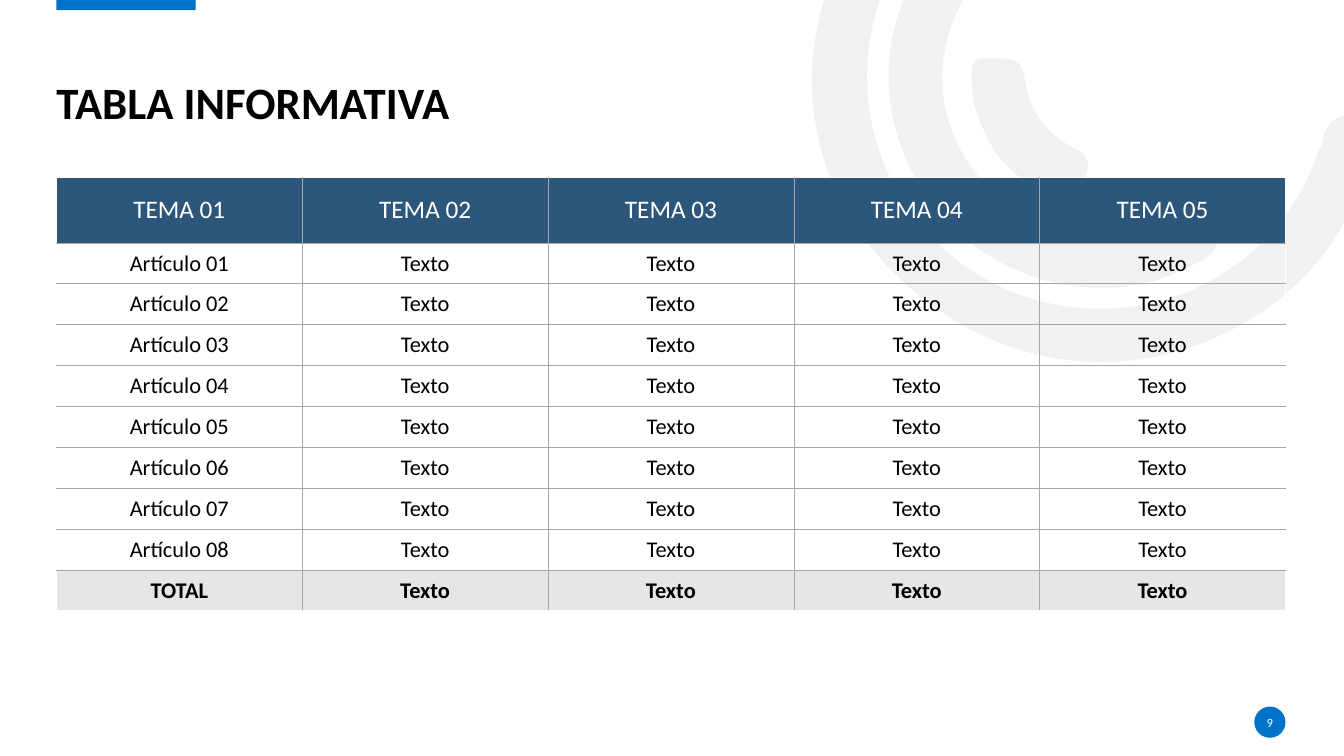
import pptx
import pptx.util
import pptx.dml.color
import pptx.enum.shapes
import pptx.enum.text
import pptx.oxml
import pptx.oxml.ns

W, H = 13.33, 7.5
MARGIN = 0.56
CONTENT_W = 12.19
FONT = "Calibri"
BLUE, NAVY, GREY, RULE = "0072C7", "2C567A", "E7E6E6", "A6A6A6"
WHITE, BLACK = "FFFFFF", "000000"

HEADERS = [f"TEMA {n:02d}" for n in range(1, 6)]
LABELS = [f"Artículo {n:02d}" for n in range(1, 9)] + ["TOTAL"]
ROWS = [HEADERS] + [[label] + ["Texto"] * 4 for label in LABELS]

# Background arcs: a start point, then cubic curves (two controls and an end)
ARCS = [
    ((8.51, 2.29), [
        (7.99, 1.49, 7.87, 0.5, 8.38, -0.5),
        (8.9, -1.52, 9.76, -2.03, 10.9, -2.07),
        (11.05, -2.07, 11.21, -2.1, 11.31, -1.95),
        (11.44, -1.75, 11.27, -1.54, 10.98, -1.54),
        (9.67, -1.54, 8.65, -0.59, 8.6, 0.68),
        (8.56, 1.81, 9.36, 2.81, 10.46, 3.02),
        (11.6, 3.24, 12.7, 2.61, 13.07, 1.52),
        (13.09, 1.48, 13.11, 1.44, 13.12, 1.4),
        (13.16, 1.19, 13.27, 1.11, 13.49, 1.17),
        (13.73, 1.24, 13.67, 1.41, 13.61, 1.56),
        (13.34, 2.45, 12.78, 3.07, 11.91, 3.41),
        (10.7, 3.87, 9.36, 3.45, 8.51, 2.29)]),
    ((9.22, 1.99), [
        (8.62, 1.15, 8.69, 0.07, 9.4, -0.68),
        (9.51, -0.79, 9.62, -0.95, 9.8, -0.78),
        (9.95, -0.64, 9.97, -0.5, 9.79, -0.32),
        (9.25, 0.26, 9.2, 1.08, 9.65, 1.68),
        (10.08, 2.29, 10.88, 2.49, 11.61, 2.15),
        (11.82, 2.05, 11.93, 2.12, 12.03, 2.29),
        (12.13, 2.5, 11.97, 2.56, 11.83, 2.63),
        (10.96, 3.1, 9.83, 2.82, 9.22, 1.99)]),
    ((9.87, 1.51), [
        (9.75, 1.3, 9.64, 1.07, 9.64, 0.82),
        (9.64, 0.73, 9.61, 0.57, 9.76, 0.58),
        (9.92, 0.59, 10.13, 0.53, 10.16, 0.76),
        (10.21, 1.1, 10.36, 1.32, 10.67, 1.48),
        (10.88, 1.57, 10.76, 1.76, 10.72, 1.89),
        (10.68, 2.06, 10.55, 1.98, 10.45, 1.94),
        (10.21, 1.87, 10.03, 1.7, 9.87, 1.51)]),
]


def rgb(value):
    return pptx.dml.color.RGBColor.from_string(value)


def inches(*lengths):
    return [pptx.util.Inches(v) for v in lengths]


def paint(sp, color):
    sp.shadow.inherit = False
    sp.fill.solid()
    sp.fill.fore_color.rgb = rgb(color)
    sp.line.fill.background()


def write(tf, text, size, color, bold=False, align=None):
    tf.text = text
    p = tf.paragraphs[0]
    p.alignment = align
    font = p.runs[0].font
    font.name, font.size, font.bold = FONT, pptx.util.Pt(size), bold
    font.color.rgb = rgb(color)
    return p


def clear_insets(tf):
    tf.margin_left = tf.margin_top = tf.margin_right = tf.margin_bottom = 0


def bend(sp):
    """Turn each three line segments of a freeform into one cubic curve."""
    qn = pptx.oxml.ns.qn
    lines = list(sp._element.iter(qn("a:lnTo")))
    for i in range(0, len(lines), 3):
        curve = pptx.oxml.parse_xml(f'<a:cubicBezTo {pptx.oxml.ns.nsdecls("a")}/>')
        lines[i].addprevious(curve)
        for line in lines[i:i + 3]:
            curve.append(line[0])
            line.getparent().remove(line)


def add_arcs(slide):
    units = 100  # path units per inch
    for start, curves in ARCS:
        points = [start] + [c[i:i + 2] for c in curves for i in (0, 2, 4)]
        points = [(round(x * units), round(y * units)) for x, y in points]
        builder = slide.shapes.build_freeform(*points[0], scale=pptx.util.Inches(1) / units)
        builder.add_line_segments(points[1:], close=True)
        sp = builder.convert_to_shape()
        bend(sp)
        paint(sp, GREY)
        clr = sp._element.spPr.find(".//" + pptx.oxml.ns.qn("a:srgbClr"))
        clr.append(pptx.oxml.parse_xml(
            f'<a:alpha {pptx.oxml.ns.nsdecls("a")} val="53000"/>'))


def add_top_bar(slide, x, y, w, h):
    sp = slide.shapes.add_shape(pptx.enum.shapes.MSO_SHAPE.RECTANGLE, *inches(x, y, w, h))
    paint(sp, BLUE)


def add_page_number(slide, x, y, size, number):
    sp = slide.shapes.add_shape(pptx.enum.shapes.MSO_SHAPE.OVAL, *inches(x, y, size, size))
    paint(sp, BLUE)
    tf = sp.text_frame
    clear_insets(tf)
    tf.word_wrap = False
    tf.vertical_anchor = pptx.enum.text.MSO_ANCHOR.MIDDLE
    write(tf, number, 9, WHITE, align=pptx.enum.text.PP_ALIGN.CENTER)


def add_title(slide, x, y, w, h, text):
    sp = slide.shapes.title
    sp.left, sp.top, sp.width, sp.height = inches(x, y, w, h)
    tf = sp.text_frame
    clear_insets(tf)
    tf.word_wrap = True
    tf.vertical_anchor = pptx.enum.text.MSO_ANCHOR.BOTTOM
    p = write(tf, text, 32, BLACK, bold=True, align=pptx.enum.text.PP_ALIGN.LEFT)
    p.line_spacing = 0.9
    # Bring the title in front of the background arcs
    slide.shapes._spTree.append(sp._element)


def set_borders(cell, outer_sides):
    tc_pr = cell._tc.get_or_add_tcPr()
    for side in "LRTB":
        color, width = (WHITE, 1) if side in outer_sides else (RULE, 0.5)
        tc_pr.append(pptx.oxml.parse_xml(
            f'<a:ln{side} {pptx.oxml.ns.nsdecls("a")} w="{pptx.util.Pt(width)}">'
            f'<a:solidFill><a:srgbClr val="{color}"/></a:solidFill></a:ln{side}>'))


def add_info_table(slide, x, y, w, h, header_h):
    n_rows, n_cols = len(ROWS), len(HEADERS)
    table = slide.shapes.add_table(n_rows, n_cols, *inches(x, y, w, h)).table
    table.first_row = table.horz_banding = False
    for col in table.columns:
        col.width = pptx.util.Inches(w / n_cols)
    for i, row in enumerate(table.rows):
        header, total = i == 0, i == n_rows - 1
        row.height = pptx.util.Inches(header_h if header else (h - header_h) / (n_rows - 1))
        for j, cell in enumerate(row.cells):
            edges = {"L": j == 0, "R": j == n_cols - 1, "T": header, "B": total}
            set_borders(cell, [side for side, outer in edges.items() if outer])
            if header or total:
                cell.fill.solid()
                cell.fill.fore_color.rgb = rgb(NAVY if header else GREY)
            else:
                cell.fill.background()
            cell.vertical_anchor = pptx.enum.text.MSO_ANCHOR.MIDDLE
            write(cell.text_frame, ROWS[i][j], 18 if header else 16,
                  WHITE if header else BLACK, total, pptx.enum.text.PP_ALIGN.CENTER)


def main():
    prs = pptx.Presentation()
    prs.slide_width, prs.slide_height = inches(W, H)
    slide = prs.slides.add_slide(prs.slide_layouts[5])
    add_arcs(slide)
    add_top_bar(slide, MARGIN, -0.02, 1.38, 0.12)
    add_page_number(slide, MARGIN + CONTENT_W - 0.31, 7.01, 0.31, "9")
    add_title(slide, MARGIN, 0.27, CONTENT_W, 1.01, "TABLA INFORMATIVA")
    add_info_table(slide, MARGIN, 1.76, CONTENT_W, 4.3, 0.65)
    prs.save("out.pptx")


if __name__ == "__main__":
    main()
